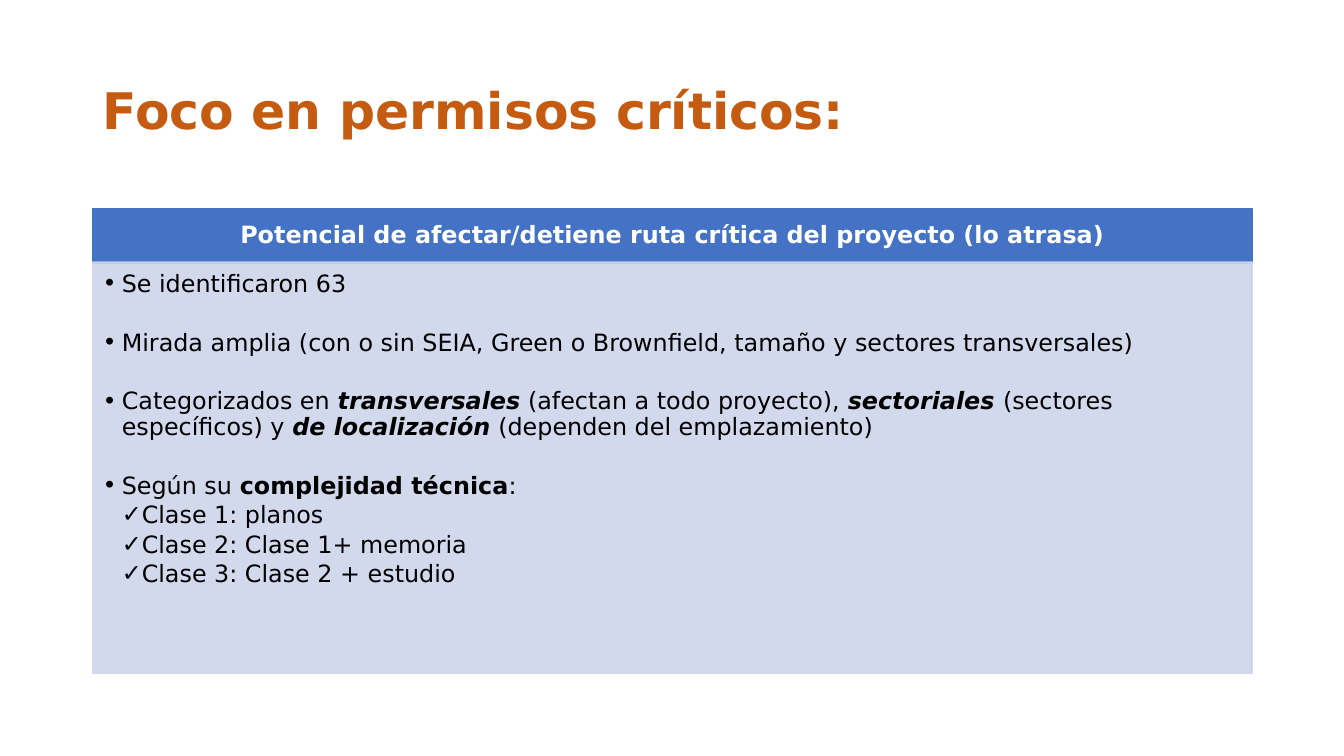
import pptx
import pptx.util
import pptx.dml.color
import pptx.enum.shapes
import pptx.enum.text
import pptx.oxml.ns
from lxml import etree

PX = 9144  # EMU per px, 100 px to the inch
FONT = "DejaVu Sans"
RGB = pptx.dml.color.RGBColor
ORANGE = RGB(0xC5, 0x5A, 0x11)
BLUE = RGB(0x44, 0x72, 0xC4)
PALE = RGB(0xCF, 0xD5, 0xEA)
WHITE = RGB(0xFF, 0xFF, 0xFF)
BLACK = RGB(0x00, 0x00, 0x00)
LEFT, WIDTH = 92, 1150
INDENT = 19
TIGHT, LOOSE = 2.6, 23.5  # points after a paragraph

# level, space after, runs of (text, style): b is bold, i is italic
POINTS = [
    (1, LOOSE, [("Se identificaron 63", "")]),
    (1, LOOSE, [("Mirada amplia (con o sin SEIA, Green o Brownfield, "
                 "tamaño y sectores transversales)", "")]),
    (1, LOOSE, [("Categorizados en ", ""), ("transversales", "bi"),
                (" (afectan a todo proyecto), ", ""), ("sectoriales ", "bi"),
                ("(sectores específicos) y ", ""), ("de localización", "bi"),
                (" (dependen del emplazamiento)", "")]),
    (1, TIGHT, [("Según su ", ""), ("complejidad técnica", "b"), (":", "")]),
    (2, TIGHT, [("Clase 1: planos", "")]),
    (2, TIGHT, [("Clase 2: Clase 1+ memoria", "")]),
    (2, TIGHT, [("Clase 3: Clase 2 + estudio", "")]),
]
MARKS = {1: "•", 2: "✓"}


def set_font(font, size, color, bold=False, italic=False):
    font.name = FONT
    font.size = pptx.util.Pt(size)
    font.color.rgb = color
    font.bold = bold
    font.italic = italic


def set_frame(frame, anchor, insets):
    """Insets run left, top, right, bottom."""
    frame.word_wrap = True
    frame.vertical_anchor = anchor
    (frame.margin_left, frame.margin_top,
     frame.margin_right, frame.margin_bottom) = [n * PX for n in insets]


def add_title(slide, text):
    box = slide.shapes.add_textbox(LEFT * PX, 40 * PX, WIDTH * PX, 145 * PX)
    set_frame(box.text_frame, pptx.enum.text.MSO_ANCHOR.MIDDLE, (10, 5, 10, 5))
    para = box.text_frame.paragraphs[0]
    para.text = text
    para.line_spacing = 0.9
    set_font(para.runs[0].font, 36, ORANGE, bold=True)


def add_panel(slide, top, height, color):
    kind = pptx.enum.shapes.MSO_SHAPE.RECTANGLE
    panel = slide.shapes.add_shape(kind, LEFT * PX, top * PX, WIDTH * PX, height * PX)
    panel.shadow.inherit = False
    panel.fill.solid()
    panel.fill.fore_color.rgb = color
    panel.line.color.rgb = color
    panel.line.width = pptx.util.Pt(1)
    return panel


def fade(shape, percent):
    """Make the fill and line of a shape partly opaque."""
    qn = pptx.oxml.ns.qn
    for color in shape.element.spPr.findall(".//" + qn("a:srgbClr")):
        etree.SubElement(color, qn("a:alpha"), val=str(percent * 1000))


def add_header(slide, text):
    panel = add_panel(slide, 207, 54, BLUE)
    set_frame(panel.text_frame, pptx.enum.text.MSO_ANCHOR.MIDDLE, (13, 8, 13, 8))
    para = panel.text_frame.paragraphs[0]
    para.text = text
    para.alignment = pptx.enum.text.PP_ALIGN.CENTER
    para.line_spacing = 0.9
    set_font(para.runs[0].font, 17, WHITE, bold=True)


def set_mark(para, level):
    qn = pptx.oxml.ns.qn
    props = para._p.get_or_add_pPr()
    props.set("marL", str(level * INDENT * PX))
    props.set("indent", str(-INDENT * PX))
    etree.SubElement(props, qn("a:buFont"), typeface=FONT)
    etree.SubElement(props, qn("a:buChar"), char=MARKS[level])


def add_points(slide, points):
    panel = add_panel(slide, 260, 408, PALE)
    fade(panel, 90)
    frame = panel.text_frame
    set_frame(frame, pptx.enum.text.MSO_ANCHOR.TOP, (10, 10, 13, 15))
    for index, (level, after, runs) in enumerate(points):
        para = frame.add_paragraph() if index else frame.paragraphs[0]
        set_mark(para, level)
        para.level = level - 1
        para.alignment = pptx.enum.text.PP_ALIGN.LEFT
        para.line_spacing = 0.9
        para.space_after = pptx.util.Pt(after)
        for text, style in runs:
            run = para.add_run()
            run.text = text
            set_font(run.font, 17, BLACK, "b" in style, "i" in style)


def main():
    deck = pptx.Presentation()
    deck.slide_width = 1333 * PX
    deck.slide_height = 750 * PX
    slide = deck.slides.add_slide(deck.slide_layouts[6])
    add_title(slide, "Foco en permisos críticos:")
    add_header(slide, "Potencial de afectar/detiene ruta crítica del proyecto (lo atrasa)")
    add_points(slide, POINTS)
    deck.save("out.pptx")


if __name__ == "__main__":
    main()
